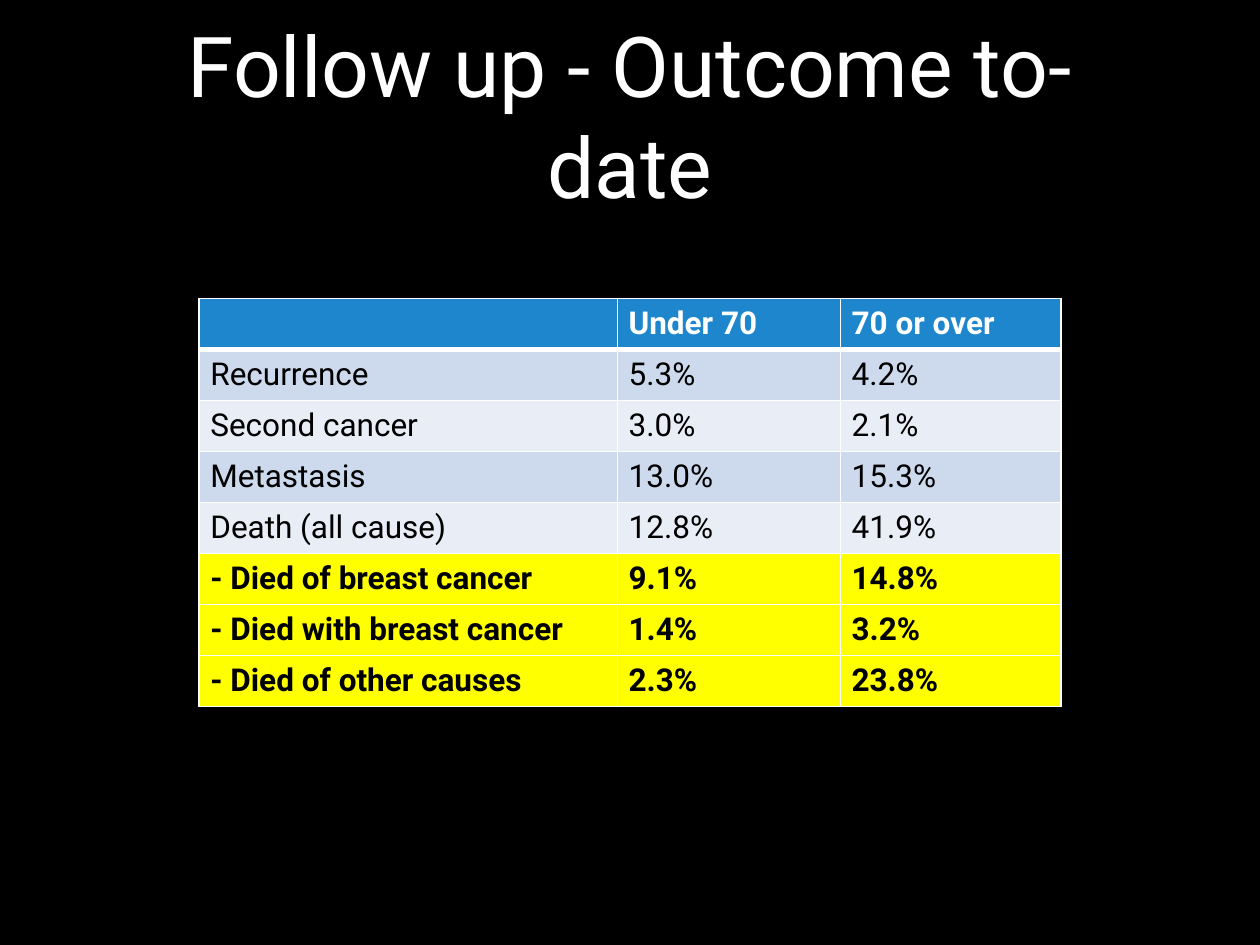
from lxml import etree
from pptx import Presentation
from pptx import util as u
from pptx.dml.color import RGBColor
from pptx.enum import text
from pptx.oxml.ns import qn

TITLE = "Follow up - Outcome to-date"
HEADER = ("", "Under 70", "70 or over")
OUTCOMES = [
    ("Recurrence", "5.3%", "4.2%"),
    ("Second cancer", "3.0%", "2.1%"),
    ("Metastasis", "13.0%", "15.3%"),
    ("Death (all cause)", "12.8%", "41.9%"),
]
DEATH_CAUSES = [
    ("- Died of breast cancer", "9.1%", "14.8%"),
    ("- Died with breast cancer", "1.4%", "3.2%"),
    ("- Died of other causes", "2.3%", "23.8%"),
]
COLUMN_WIDTHS = (3.32, 1.77, 1.75)
ROW_HEIGHT = 0.405
FONT = "Roboto"
BLACK, WHITE, BLUE, YELLOW = "000000", "FFFFFF", "1D86CD", "FFFF00"
BANDS = ("CDD9ED", "E8EDF6")


def paint(fill, color):
    fill.solid()
    fill.fore_color.rgb = RGBColor.from_string(color)


def add_run(paragraph, words, size, color, bold=False):
    run = paragraph.add_run()
    run.text = words
    run.font.name = FONT
    run.font.size = u.Pt(size)
    run.font.bold = bold
    paint(run.font.fill, color)


def add_borders(cell, top, bottom):
    properties = cell._tc.get_or_add_tcPr()
    for side, width in (("L", 1), ("R", 1), ("T", top), ("B", bottom)):
        line = etree.SubElement(properties, qn(f"a:ln{side}"), w=str(u.Pt(width)))
        solid = etree.SubElement(line, qn("a:solidFill"))
        etree.SubElement(solid, qn("a:srgbClr"), val=WHITE)


def add_title(slide):
    title = slide.shapes.title
    title.left, title.top = u.Inches(0.75), u.Inches(0.13)
    title.width, title.height = u.Inches(8.5), u.Inches(1.56)
    frame = title.text_frame
    frame.word_wrap = True
    frame.auto_size = text.MSO_AUTO_SIZE.NONE
    frame.vertical_anchor = text.MSO_ANCHOR.MIDDLE
    frame.paragraphs[0].alignment = text.PP_ALIGN.CENTER
    add_run(frame.paragraphs[0], TITLE, 48, WHITE)


def add_outcome_table(slide):
    rows = [(HEADER, BLUE, WHITE, True)]
    rows += [(row, BANDS[i % 2], BLACK, False) for i, row in enumerate(OUTCOMES)]
    rows += [(row, YELLOW, BLACK, True) for row in DEATH_CAUSES]
    table = slide.shapes.add_table(
        len(rows), len(COLUMN_WIDTHS), u.Inches(1.58), u.Inches(2.37),
        u.Inches(sum(COLUMN_WIDTHS)), u.Inches(ROW_HEIGHT * len(rows))).table
    for column, width in zip(table.columns, COLUMN_WIDTHS):
        column.width = u.Inches(width)
    for r, (values, background, ink, bold) in enumerate(rows):
        for c, value in enumerate(values):
            cell = table.cell(r, c)
            add_borders(cell, 3 if r == 1 else 1, 3 if r == 0 else 1)
            paint(cell.fill, background)
            cell.margin_left = cell.margin_right = u.Inches(0.09)
            cell.margin_top = cell.margin_bottom = u.Inches(0.05)
            if value:
                add_run(cell.text_frame.paragraphs[0], value, 18, ink, bold)


def main():
    """Build the follow-up outcome slide."""
    deck = Presentation()
    deck.slide_width, deck.slide_height = u.Inches(10), u.Inches(7.5)
    slide = deck.slides.add_slide(deck.slide_layouts[5])
    paint(slide.background.fill, BLACK)
    add_title(slide)
    add_outcome_table(slide)
    deck.save("out.pptx")


if __name__ == "__main__":
    main()
